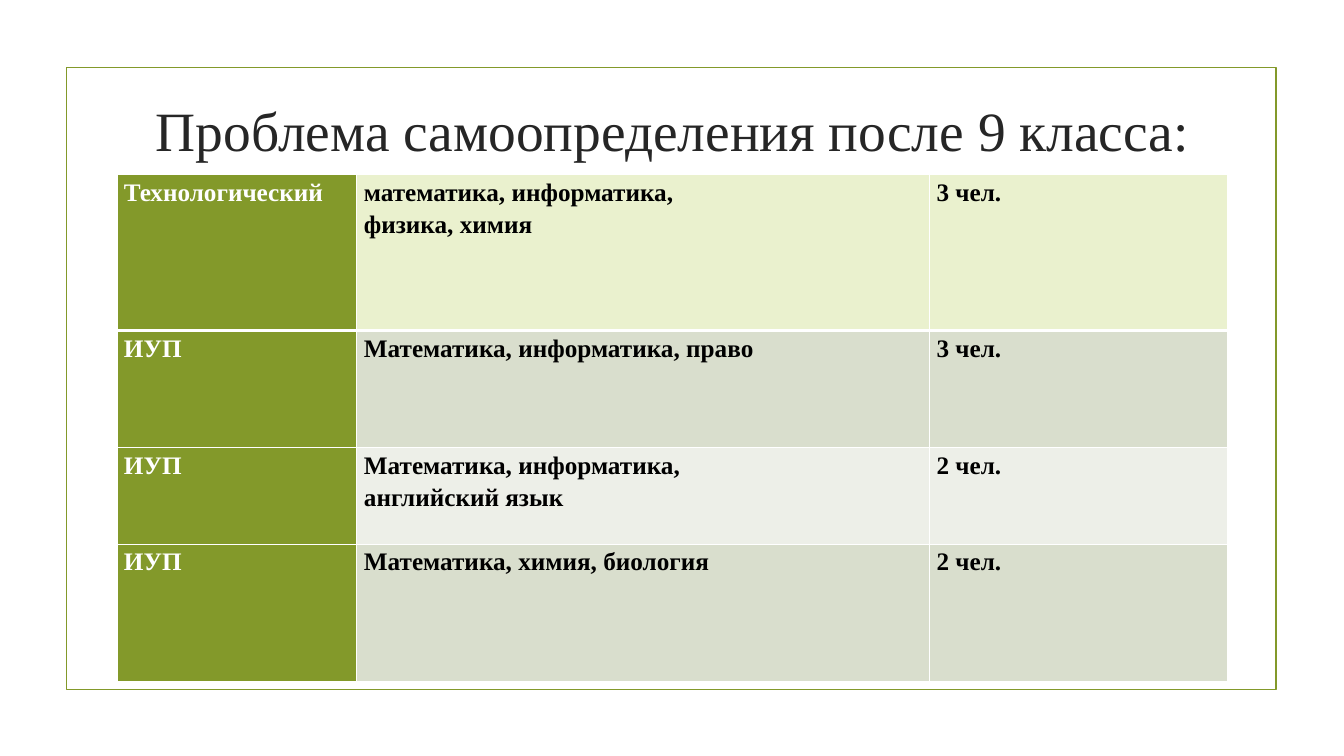
from dataclasses import dataclass

from lxml.etree import SubElement
from pptx import Presentation
from pptx.dml.color import RGBColor
from pptx.enum.shapes import MSO_SHAPE
from pptx.enum.text import MSO_ANCHOR, MSO_AUTO_SIZE, PP_ALIGN
from pptx.oxml.ns import qn
from pptx.util import Inches, Pt

FONT = "Times New Roman"
COLORS = {
    "green": "83992A",
    "lime": "EAF1CE",
    "sage": "D9DECD",
    "mist": "EDEFE8",
    "white": "FFFFFF",
    "black": "000000",
    "title": "262626",
}


@dataclass
class Track:
    name: str
    topics: list[str]
    count: str
    fill: str
    height: float


TRACKS = [
    Track("Технологический", ["математика, информатика,", "физика, химия"],
          "3 чел.", "lime", 1.55),
    Track("ИУП", ["Математика, информатика, право"], "3 чел.", "sage", 1.16),
    Track("ИУП", ["Математика, информатика,", "английский язык"],
          "2 чел.", "mist", 0.96),
    Track("ИУП", ["Математика, химия, биология"], "2 чел.", "sage", 1.36),
]
WIDTHS = [2.38, 5.68, 2.96]


def color(name: str) -> RGBColor:
    return RGBColor.from_string(COLORS[name])


def add_run(para, text: str, size: float, ink: str, bold: bool) -> None:
    run = para.add_run()
    run.text = text
    run.font.name = FONT
    run.font.size = Pt(size)
    run.font.bold = bold
    run.font.color.rgb = color(ink)


def add_edge(cell, side: str, width: float) -> None:
    edge = SubElement(cell._tc.get_or_add_tcPr(), qn(f"a:ln{side}"), w=str(Pt(width)))
    fill = SubElement(edge, qn("a:solidFill"))
    SubElement(fill, qn("a:srgbClr"), val=COLORS["white"])


def fill_cell(cell, lines: list[str], fill: str, ink: str, edges: dict[str, float]) -> None:
    cell.margin_left = cell.margin_right = Inches(0.07)
    cell.margin_top = cell.margin_bottom = 0
    for side, width in edges.items():
        add_edge(cell, side, width)
    cell.fill.solid()
    cell.fill.fore_color.rgb = color(fill)
    frame = cell.text_frame
    for i, line in enumerate(lines):
        para = frame.add_paragraph() if i else frame.paragraphs[0]
        para.alignment = PP_ALIGN.JUSTIFY
        para.line_spacing = 1.15
        add_run(para, line, 18, ink, True)


def add_frame(slide) -> None:
    box = slide.shapes.add_shape(MSO_SHAPE.RECTANGLE, Inches(0.66), Inches(0.67),
                                 Inches(12), Inches(6.17))
    box.shadow.inherit = False
    box.fill.background()
    box.line.color.rgb = color("green")
    box.line.width = Pt(1.25)


def set_title(slide) -> None:
    title = slide.shapes.title
    title.left, title.top = Inches(1.42), Inches(1.07)
    title.width, title.height = Inches(10.5), Inches(0.42)
    frame = title.text_frame
    frame.auto_size = MSO_AUTO_SIZE.NONE
    frame.vertical_anchor = MSO_ANCHOR.MIDDLE
    para = frame.paragraphs[0]
    para.alignment = PP_ALIGN.CENTER
    add_run(para, "Проблема самоопределения после 9 класса:", 39.6, "title", False)


def add_tracks(slide) -> None:
    heights = [track.height for track in TRACKS]
    table = slide.shapes.add_table(
        len(TRACKS), len(WIDTHS), Inches(1.16), Inches(1.73),
        Inches(sum(WIDTHS)), Inches(sum(heights))).table
    table.first_row = table.horz_banding = False
    for col, width in zip(table.columns, WIDTHS):
        col.width = Inches(width)
    for i, track in enumerate(TRACKS):
        row = table.rows[i]
        row.height = Inches(track.height)
        # A thick rule parts the first row from the rest
        edges = {"L": 1, "R": 1, "T": 3 if i == 1 else 1, "B": 3 if i == 0 else 1}
        name, topics, count = row.cells
        fill_cell(name, [track.name], "green", "white", edges)
        fill_cell(topics, track.topics, track.fill, "black", edges)
        fill_cell(count, [track.count], track.fill, "black", edges)


def main() -> None:
    deck = Presentation()
    deck.slide_width, deck.slide_height = Inches(13.33), Inches(7.5)
    slide = deck.slides.add_slide(deck.slide_layouts.get_by_name("Title Only"))
    # Border, heading and table
    add_frame(slide)
    set_title(slide)
    add_tracks(slide)
    deck.save("out.pptx")


if __name__ == "__main__":
    main()
